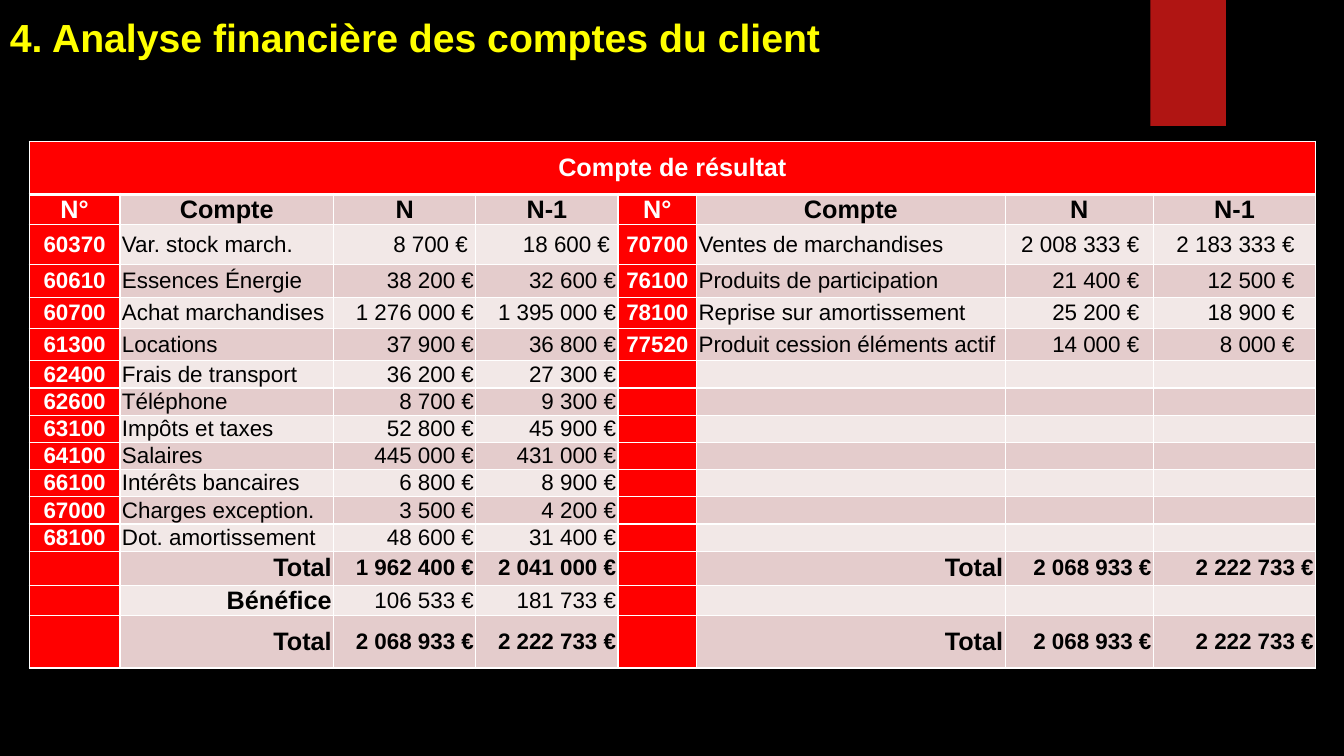
from lxml import etree
from pptx import Presentation
from pptx.dml.color import RGBColor as RGB
from pptx.enum.shapes import MSO_SHAPE as Shape
from pptx.enum.text import MSO_ANCHOR as Anchor, PP_ALIGN as Align
from pptx.oxml.ns import qn
from pptx.util import Inches, Pt

COLORS = {"black": "000000", "white": "FFFFFF", "yellow": "FFFF00", "red": "FF0000",
          "ribbon": "B01513", "dark band": "E4CCCC", "light band": "F2E8E7"}
FONT = "Arial"


def style(paragraph, size, color, bold):
    for run in paragraph.runs:
        run.font.name = FONT
        run.font.size = Pt(size)
        run.font.bold = bold
        run.font.color.rgb = RGB.from_string(COLORS[color])


def add_border(cell, side, width):
    line = etree.SubElement(cell._tc.get_or_add_tcPr(), qn(f"a:ln{side}"), w=str(Pt(width)))
    fill = etree.SubElement(line, qn("a:solidFill"))
    etree.SubElement(fill, qn("a:srgbClr"), val=COLORS["white"])


prs = Presentation()
prs.slide_width, prs.slide_height = Inches(13.33), Inches(7.5)
slide = prs.slides.add_slide(prs.slide_layouts[6])
slide.background.fill.solid()
slide.background.fill.fore_color.rgb = RGB.from_string(COLORS["black"])

# Ribbon hanging from the top edge
ribbon = slide.shapes.add_shape(Shape.RECTANGLE, Inches(11.41), 0, Inches(0.75), Inches(1.25))
ribbon.shadow.inherit = False
ribbon.fill.solid()
ribbon.fill.fore_color.rgb = RGB.from_string(COLORS["ribbon"])
ribbon.line.fill.background()

# Title
title = slide.shapes.add_textbox(0, Inches(0.08), Inches(12.29), Inches(0.57)).text_frame
title.word_wrap = True
title.text = "4. Analyse financière des comptes du client"
style(title.paragraphs[0], 28, "yellow", True)

# Income statement: expenses on the left, revenue on the right
HEADINGS = ["N°", "Compte", "N", "N-1"]
expenses = [
    ["60370", "Var. stock march.", "8 700 €", "18 600 €"],
    ["60610", "Essences Énergie", "38 200 €", "32 600 €"],
    ["60700", "Achat marchandises", "1 276 000 €", "1 395 000 €"],
    ["61300", "Locations", "37 900 €", "36 800 €"],
    ["62400", "Frais de transport", "36 200 €", "27 300 €"],
    ["62600", "Téléphone", "8 700 €", "9 300 €"],
    ["63100", "Impôts et taxes", "52 800 €", "45 900 €"],
    ["64100", "Salaires", "445 000 €", "431 000 €"],
    ["66100", "Intérêts bancaires", "6 800 €", "8 900 €"],
    ["67000", "Charges exception.", "3 500 €", "4 200 €"],
    ["68100", "Dot. amortissement", "48 600 €", "31 400 €"],
    ["", "Total", "1 962 400 €", "2 041 000 €"],
    ["", "Bénéfice", "106 533 €", "181 733 €"],
    ["", "Total", "2 068 933 €", "2 222 733 €"],
]
NOTHING = [""] * 4
grand_total = ["", "Total", "2 068 933 €", "2 222 733 €"]
revenue = [
    ["70700", "Ventes de marchandises", "2 008 333 €", "2 183 333 €"],
    ["76100", "Produits de participation", "21 400 €", "12 500 €"],
    ["78100", "Reprise sur amortissement", "25 200 €", "18 900 €"],
    ["77520", "Produit cession éléments actif", "14 000 €", "8 000 €"],
    *[NOTHING] * 7, grand_total, NOTHING, grand_total,
]
statement = [["Compte de résultat"] + [""] * 7, HEADINGS * 2]
statement += [left + right for left, right in zip(expenses, revenue)]

widths = [0.9, 2.12, 1.41, 1.41, 0.78, 3.06, 1.47, 1.61]
heights = [0.53, 0.29, 0.39, 0.33, 0.31, 0.32, *[0.27] * 7, 0.34, 0.29, 0.52]
FIRST_ACCOUNT, FIRST_TOTAL, PROFIT = 2, 13, 14
REVENUE_INSETS = {6: 0.14, 7: 0.21}  # revenue amounts stand clear of the right border

table = slide.shapes.add_table(len(heights), len(widths), Inches(0.29), Inches(1.4),
                               Inches(sum(widths)), Inches(sum(heights))).table
for column, width in zip(table.columns, widths):
    column.width = Inches(width)
for row, height in zip(table.rows, heights):
    row.height = Inches(height)
table.cell(0, 0).merge(table.cell(0, 7))

for r, entries in enumerate(statement):
    for c, entry in enumerate(entries):
        cell = table.cell(r, c)
        heading = r < FIRST_ACCOUNT
        closing = r >= FIRST_TOTAL
        on_red = r == 0 or c % 4 == 0
        label = c % 4 == 1

        # Borders, fill and margins
        for side in "LRTB":
            thick = (r, side) in ((0, "B"), (1, "T"))
            add_border(cell, side, 3 if thick else 1)
        band = "red" if on_red else "dark band" if r % 2 else "light band"
        cell.fill.solid()
        cell.fill.fore_color.rgb = RGB.from_string(COLORS[band])
        cell.vertical_anchor = Anchor.MIDDLE
        cell.margin_top = cell.margin_bottom = 0
        inset = 0.02
        if not heading and not closing:
            inset = REVENUE_INSETS.get(c, inset)
            if r == FIRST_ACCOUNT and c in (2, 3):
                inset = 0.08
        cell.margin_left, cell.margin_right = Inches(0.02), Inches(inset)

        # Text
        paragraph = cell.text_frame.paragraphs[0]
        if not entry:
            etree.SubElement(paragraph._p, qn("a:endParaRPr"), sz="1600")
            continue
        paragraph.text = entry
        if heading or on_red:
            paragraph.alignment = Align.CENTER
        elif label and not closing:
            paragraph.alignment = Align.JUSTIFY
        else:
            paragraph.alignment = Align.RIGHT
        size = 18 if heading or (closing and label) else 16
        bold = heading or on_red or (closing and (label or r != PROFIT))
        style(paragraph, size, "white" if on_red else "black", bold)

prs.save("out.pptx")
